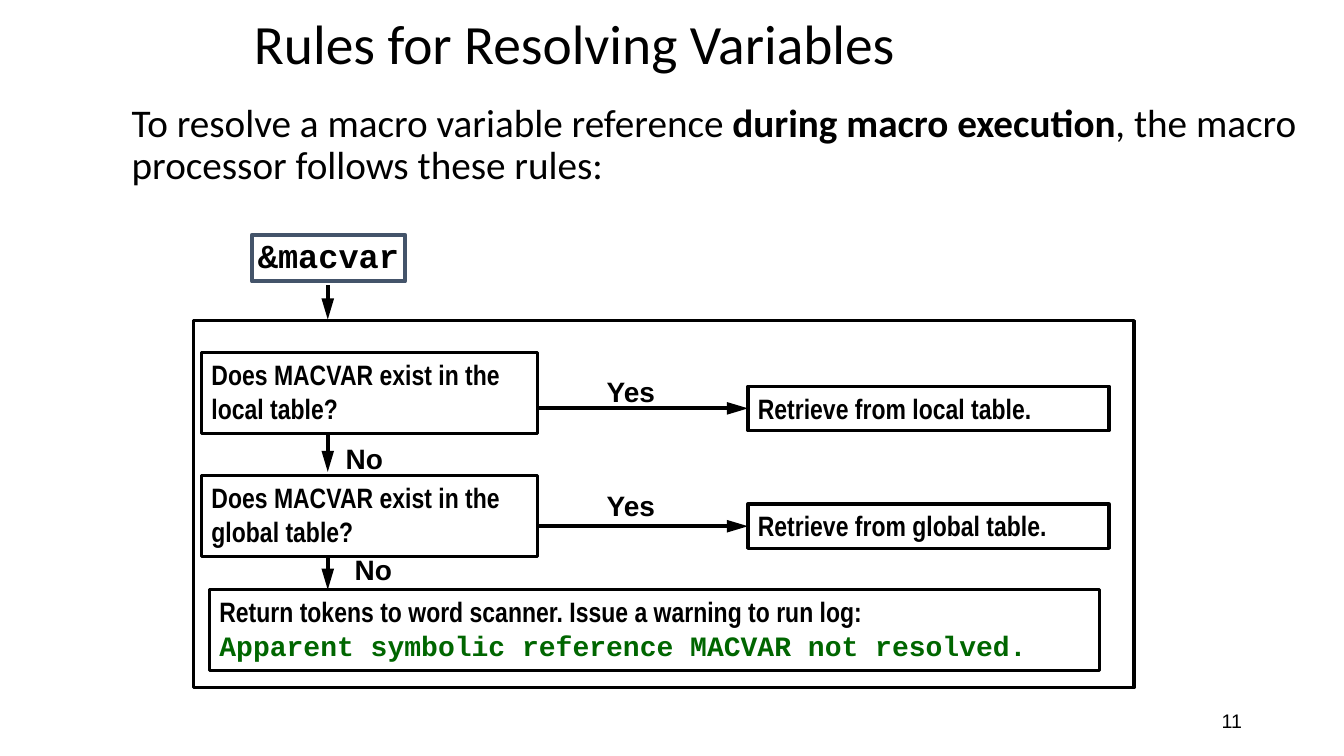
from pptx import Presentation
from pptx.dml.color import RGBColor
from pptx.enum.shapes import MSO_CONNECTOR, MSO_SHAPE
from pptx.enum.text import MSO_ANCHOR, PP_ALIGN
from pptx.oxml.ns import qn
from pptx.util import Cm, Pt
from lxml.etree import SubElement

BLACK = RGBColor(0x00, 0x00, 0x00)
WHITE = RGBColor(0xFF, 0xFF, 0xFF)
SLATE = RGBColor(0x44, 0x54, 0x6A)
GREEN = RGBColor(0x00, 0x66, 0x00)

LEFT_SIDE = 1
ARROW_X = 8.26


class FlowSlide:
    """Draws flowchart elements on one slide; all lengths are in cm."""

    heading_font = "Calibri"
    label_font = "Arial"
    box_font = "Arial Narrow"
    code_font = "Courier New"

    def __init__(self, prs):
        self.slide = prs.slides.add_slide(prs.slide_layouts[6])

    def style(self, p, font, size, bold=False, color=BLACK):
        for r in p.runs:
            r.font.name = font
            r.font.size = Pt(size)
            r.font.bold = bold
            r.font.color.rgb = color

    def text(self, x, y, w, h, text, font, size, bold=False):
        s = self.slide.shapes.add_textbox(Cm(x), Cm(y), Cm(w), Cm(h))
        tf = s.text_frame
        tf.word_wrap = True
        tf.text = text
        self.style(tf.paragraphs[0], font, size, bold)
        return tf

    def label(self, x, y, text):
        return self.text(x, y, 2.1, 1.09, text, self.label_font, 20, True)

    def box(self, x, y, w, h, text="", line=BLACK, width=2.25):
        s = self.slide.shapes.add_shape(
            MSO_SHAPE.RECTANGLE, Cm(x), Cm(y), Cm(w), Cm(h))
        s.shadow.inherit = False
        s.fill.solid()
        s.fill.fore_color.rgb = WHITE
        s.line.color.rgb = line
        s.line.width = Pt(width)
        tf = s.text_frame
        tf.word_wrap = True
        tf.vertical_anchor = MSO_ANCHOR.TOP
        tf.text = text
        for p in tf.paragraphs:
            p.alignment = PP_ALIGN.LEFT
            self.style(p, self.box_font, 20, True)
        return s

    def arrow(self, x1, y1, x2, y2):
        c = self.slide.shapes.add_connector(
            MSO_CONNECTOR.STRAIGHT, Cm(x1), Cm(y1), Cm(x2), Cm(y2))
        c.line.color.rgb = BLACK
        c.line.width = Pt(3)
        SubElement(c.line._get_or_add_ln(), qn("a:tailEnd"),
                   type="triangle", len="lg")
        SubElement(c._element.spPr, qn("a:effectLst"))
        return c


def main():
    prs = Presentation()
    prs.slide_width, prs.slide_height = Cm(33.87), Cm(19.05)
    flow = FlowSlide(prs)

    tf = flow.text(6.15, 0.45, 22.02, 1.47, "Rules for Resolving Variables",
                   flow.heading_font, 39.6)
    tf.vertical_anchor = MSO_ANCHOR.MIDDLE
    tf.paragraphs[0].line_spacing = 0.9

    tf = flow.text(3.07, 2.49, 30.4, 2.41,
                   "To resolve a macro variable reference ",
                   flow.heading_font, 28)
    p = tf.paragraphs[0]
    p.line_spacing = 0.9
    for part in ("during macro execution",
                 ", the macro processor follows these rules:"):
        p.add_run().text = part
    flow.style(p, flow.heading_font, 28)
    p.runs[1].font.bold = True

    tf = flow.text(23.93, 17.65, 7.62, 1.02, "11", flow.label_font, 14)
    tf.vertical_anchor = MSO_ANCHOR.MIDDLE
    tf.paragraphs[0].alignment = PP_ALIGN.RIGHT

    flow.box(4.88, 8.08, 23.7, 9.25).fill.background()

    reference = flow.box(6.35, 5.92, 3.86, 1.17, "&macvar", SLATE, 3)
    tf = reference.text_frame
    tf.word_wrap = False
    tf.margin_left = tf.margin_right = Cm(0.15)
    tf.margin_top = tf.margin_bottom = Cm(0.15)
    tf.paragraphs[0].line_spacing = 0.85
    flow.style(tf.paragraphs[0], flow.code_font, 24, True)
    flow.arrow(ARROW_X, 7.19, ARROW_X, 8.05)

    # table, question top, answer top, Yes top, No left and top, No arrow end
    steps = [
        ("local", 8.89, 9.73, 9.32, 8.46, 11.0, 11.89),
        ("global", 11.99, 12.7, 12.19, 8.69, 13.79, 14.86),
    ]
    for table, ask_y, answer_y, yes_y, no_x, no_y, next_y in steps:
        flow.box(5.08, ask_y, 8.46, 2.03,
                 f"Does MACVAR exist in the {table} table?")
        answer = flow.box(18.85, answer_y, 9.1, 1.12,
                          f"Retrieve from {table} table.")
        middle = answer_y + 0.56
        yes = flow.arrow(13.54, middle, 18.85, middle)
        yes.end_connect(answer, LEFT_SIDE)
        flow.arrow(ARROW_X, ask_y + 2.03, ARROW_X, next_y)
        flow.label(15.04, yes_y, "Yes")
        flow.label(no_x, no_y, "No")

    warning = flow.box(
        5.28, 14.86, 22.43, 2.03,
        "Return tokens to word scanner. Issue a warning to run log:\n"
        "Apparent symbolic reference MACVAR not resolved.")
    flow.style(warning.text_frame.paragraphs[1], flow.code_font, 20, True, GREEN)

    prs.save("out.pptx")


if __name__ == "__main__":
    main()
